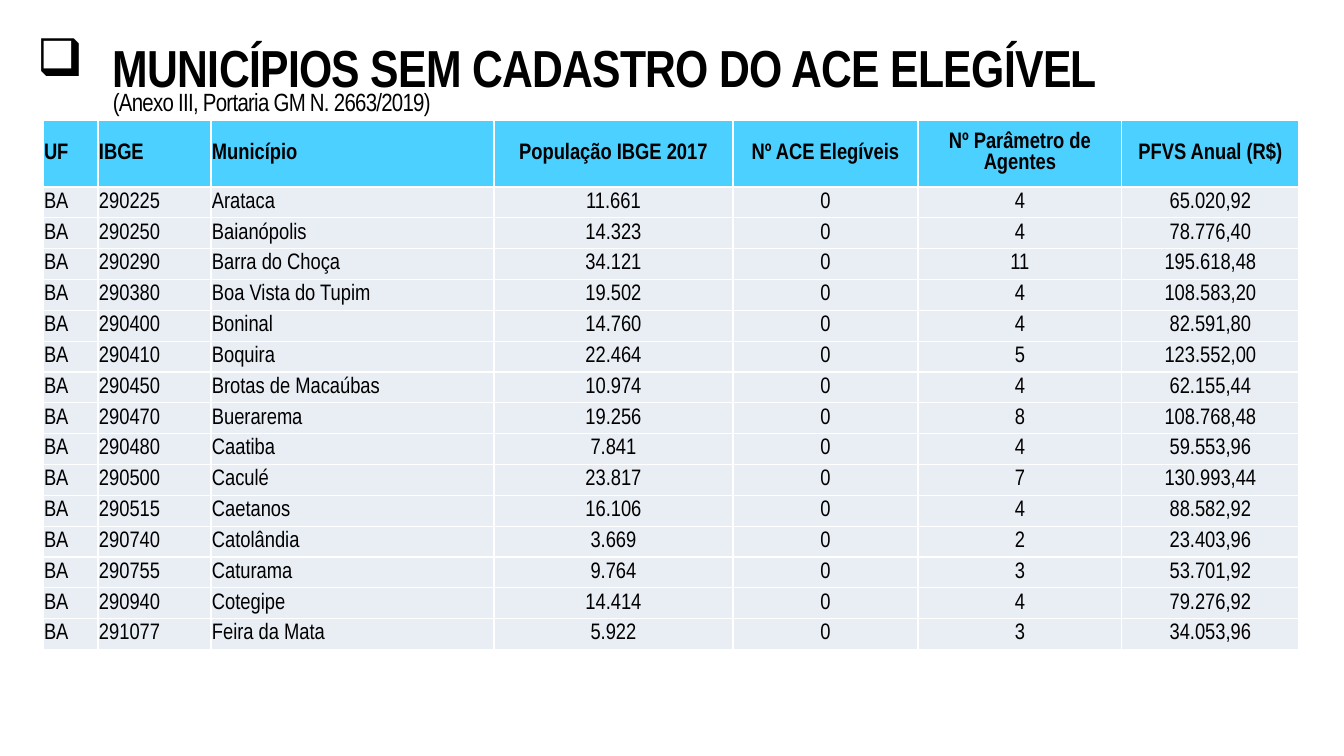
from lxml import etree
from pptx import Presentation
from pptx import util as u
from pptx.dml.color import RGBColor
from pptx.enum import text
from pptx.oxml.ns import qn

COLORS = {"ink": "000000", "header": "4BD0FF", "body": "E9EDF4", "border": "FFFFFF"}

HEADERS = ["UF", "IBGE", "Município", "População IBGE 2017", "Nº ACE Elegíveis",
           "Nº Parâmetro de Agentes", "PFVS Anual (R$)"]
COLUMN_WIDTHS = [55, 113, 283, 239, 185, 204, 177]
LEFT_COLUMNS = 3
MUNICIPALITIES = [
    ("290225", "Arataca", "11.661", "4", "65.020,92"),
    ("290250", "Baianópolis", "14.323", "4", "78.776,40"),
    ("290290", "Barra do Choça", "34.121", "11", "195.618,48"),
    ("290380", "Boa Vista do Tupim", "19.502", "4", "108.583,20"),
    ("290400", "Boninal", "14.760", "4", "82.591,80"),
    ("290410", "Boquira", "22.464", "5", "123.552,00"),
    ("290450", "Brotas de Macaúbas", "10.974", "4", "62.155,44"),
    ("290470", "Buerarema", "19.256", "8", "108.768,48"),
    ("290480", "Caatiba", "7.841", "4", "59.553,96"),
    ("290500", "Caculé", "23.817", "7", "130.993,44"),
    ("290515", "Caetanos", "16.106", "4", "88.582,92"),
    ("290740", "Catolândia", "3.669", "2", "23.403,96"),
    ("290755", "Caturama", "9.764", "3", "53.701,92"),
    ("290940", "Cotegipe", "14.414", "4", "79.276,92"),
    ("291077", "Feira da Mata", "5.922", "3", "34.053,96"),
]


def px(length):
    return u.Emu(round(length * 914400 / 100.8))


class SlideBuilder:
    font_name = "Arial Narrow"

    def __init__(self, slide):
        self.slide = slide

    def style(self, font, size, bold):
        font.name = self.font_name
        font.size = u.Pt(size)
        font.bold = bold
        font.color.rgb = RGBColor.from_string(COLORS["ink"])

    def title(self, left, top, width, height, heading, reference):
        box = self.slide.shapes.add_textbox(px(left), px(top), px(width), px(height))
        frame = box.text_frame
        frame.word_wrap = True
        frame.vertical_anchor = text.MSO_ANCHOR.BOTTOM
        para = frame.paragraphs[0]
        para.line_spacing = 0.65
        properties = para._p.get_or_add_pPr()
        properties.set("marL", str(px(76)))
        properties.set("indent", str(px(-76)))
        etree.SubElement(properties, qn("a:buChar"), char="❑")
        self.style(para.font, 37.2, True)
        for words, size, bold in ((heading + " ", 37.2, True), (reference, 17.8, False)):
            span = para.add_run()
            span.text = words
            self.style(span.font, size, bold)
            span._r.get_or_add_rPr().set("spc", "-50")

    def table(self, left, top, widths, header_height, body_height, rows):
        frame = self.slide.shapes.add_table(len(rows), len(widths), px(left), px(top),
                                            px(sum(widths)), px(header_height + body_height))
        table = frame.table
        for column, width in zip(table.columns, widths):
            column.width = px(width)
        row_height = px(body_height / (len(rows) - 1))
        for r, values in enumerate(rows):
            table.rows[r].height = px(header_height) if r == 0 else row_height
            for c, value in enumerate(values):
                self.cell(table.cell(r, c), value, r == 0, c >= LEFT_COLUMNS)

    def cell(self, cell, value, is_header, centered):
        cell.margin_left = cell.margin_right = px(1)
        cell.margin_top = cell.margin_bottom = px(3)
        cell.vertical_anchor = text.MSO_ANCHOR.MIDDLE
        self.borders(cell)
        cell.fill.solid()
        cell.fill.fore_color.rgb = RGBColor.from_string(COLORS["header" if is_header else "body"])
        cell.text = value
        para = cell.text_frame.paragraphs[0]
        para.alignment = text.PP_ALIGN.CENTER if centered else text.PP_ALIGN.LEFT
        self.style(para.font, 16, is_header)

    def borders(self, cell):
        properties = cell._tc.get_or_add_tcPr()
        for side in ("lnL", "lnR", "lnT", "lnB"):
            line = etree.SubElement(properties, qn("a:" + side), w=str(u.Pt(1)))
            fill = etree.SubElement(line, qn("a:solidFill"))
            etree.SubElement(fill, qn("a:srgbClr"), val=COLORS["border"])


def main():
    deck = Presentation()
    deck.slide_width, deck.slide_height = px(1344), px(756)
    page = SlideBuilder(deck.slides.add_slide(deck.slide_layouts[6]))

    # Table: every municipality is in BA and has no eligible agents
    rows = [HEADERS] + [("BA", code, name, population, "0", agents, amount)
                        for code, name, population, agents, amount in MUNICIPALITIES]
    page.table(43, 120, COLUMN_WIDTHS, 67, 463, rows)

    # Title
    page.title(27, 20, 1109, 100, "MUNICÍPIOS SEM CADASTRO DO ACE ELEGÍVEL",
               "(Anexo III, Portaria GM N. 2663/2019)")

    deck.save("out.pptx")


if __name__ == "__main__":
    main()
